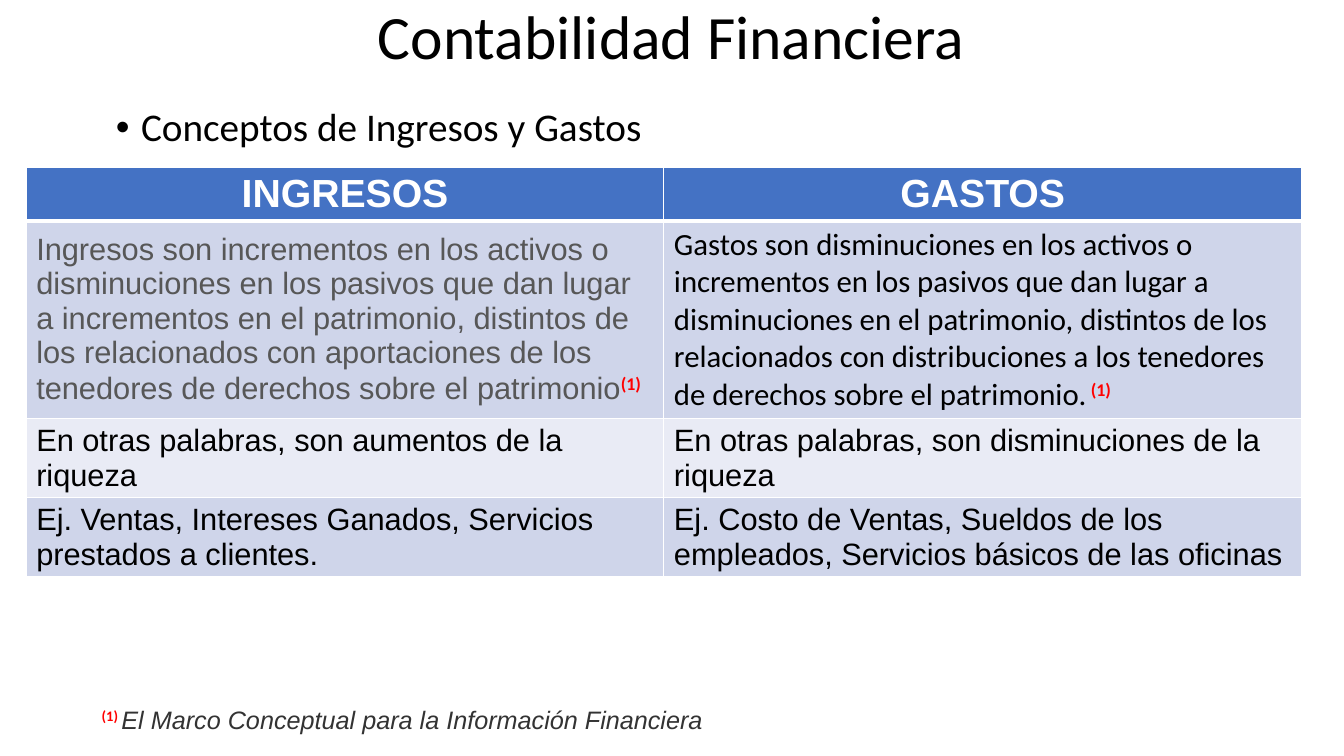
from dataclasses import dataclass

from lxml import etree
from pptx import Presentation
from pptx import util as u
from pptx.dml.color import RGBColor
from pptx.enum import text
from pptx.oxml import ns

PX = 9144  # 100 px to the inch
SLIDE = (1333, 750)


@dataclass(frozen=True)
class Theme:
    sans: str = "Arial"
    main: str = "Calibri"
    black: str = "000000"
    white: str = "FFFFFF"
    grey: str = "575757"
    dark: str = "333333"
    red: str = "FF0000"
    header: str = "4472C4"
    bands: tuple = ("CFD5EA", "E9EBF5")
    title: int = 44
    heading: int = 28
    cell: int = 22
    note: int = 18


T = Theme()
TITLE = dict(name=T.main, size=T.title, color=T.black)
BULLET = dict(name=T.main, size=T.heading, color=T.black)
HEADER = dict(name=T.sans, size=T.heading, color=T.white, bold=True)
CELL = dict(name=T.sans, size=T.cell, color=T.black, bold=False)
CELL_GREY = {**CELL, "color": T.grey}
CELL_MAIN = {**CELL, "name": T.main}
MARK = dict(name=T.main, size=T.cell, color=T.red, bold=True, raised=True)
NOTE_MARK = {**MARK, "size": T.note}
NOTE = dict(name=T.sans, size=T.note, color=T.dark, italic=True)

ROW_HEIGHTS = (52, 196, 78, 78)
ROWS = [
    [[("INGRESOS", HEADER)], [("GASTOS", HEADER)]],
    [
        [("Ingresos son incrementos en los activos o disminuciones en los pasivos "
          "que dan lugar a incrementos en el patrimonio, distintos de los "
          "relacionados con aportaciones de los tenedores de derechos sobre el "
          "patrimonio", CELL_GREY), ("(1)", MARK)],
        [("Gastos son disminuciones en los activos o incrementos en los pasivos "
          "que dan lugar a disminuciones en el patrimonio, distintos de los "
          "relacionados con distribuciones a los tenedores de derechos sobre el "
          "patrimonio.", CELL_MAIN), (" (1)", MARK)],
    ],
    [
        [("En otras palabras, son aumentos de la riqueza", CELL)],
        [("En otras palabras, son disminuciones de la riqueza", CELL)],
    ],
    [
        [("Ej. Ventas, Intereses Ganados, Servicios prestados a clientes.", CELL)],
        [("Ej. Costo de Ventas, Sueldos de los empleados, Servicios básicos de "
          "las oficinas", CELL)],
    ],
]


def emu(box):
    return [u.Emu(v * PX) for v in box]


def put_runs(p, runs, **layout):
    """Fill a paragraph with (words, format) runs and set its layout."""
    for key, value in layout.items():
        setattr(p, key, value)
    for words, fmt in runs:
        r = p.add_run()
        r.text = words
        for key, value in fmt.items():
            if key == "color":
                r.font.color.rgb = RGBColor.from_string(value)
            elif key == "raised":
                r._r.get_or_add_rPr().set("baseline", "30000")
            else:
                setattr(r.font, key, u.Pt(value) if key == "size" else value)


def place(sp, box, anchor):
    sp.left, sp.top, sp.width, sp.height = emu(box)
    tf = sp.text_frame
    tf.word_wrap = True
    tf.auto_size = text.MSO_AUTO_SIZE.NONE
    tf.vertical_anchor = anchor
    return tf.paragraphs[0]


def add_title(s, box):
    p = place(s.shapes.title, box, text.MSO_ANCHOR.MIDDLE)
    put_runs(p, [("Contabilidad Financiera", TITLE)],
             alignment=text.PP_ALIGN.CENTER, line_spacing=0.9)


def add_topic(s, box):
    p = place(s.placeholders[1], box, text.MSO_ANCHOR.TOP)
    pPr = p._p.get_or_add_pPr()
    pPr.set("marL", str(25 * PX))
    pPr.set("indent", str(-25 * PX))
    etree.SubElement(pPr, ns.qn("a:buFont"), typeface=T.sans)
    etree.SubElement(pPr, ns.qn("a:buChar"), char="•")
    put_runs(p, [("Conceptos de Ingresos y Gastos", BULLET)],
             line_spacing=0.9, space_before=u.Pt(0))


def set_borders(cell, bottom):
    tcPr = cell._tc.get_or_add_tcPr()
    for side, points in (("L", 1), ("R", 1), ("T", 1), ("B", bottom)):
        ln = etree.SubElement(tcPr, ns.qn(f"a:ln{side}"), w=str(u.Pt(points)))
        fill = etree.SubElement(ln, ns.qn("a:solidFill"))
        etree.SubElement(fill, ns.qn("a:srgbClr"), val=T.white)


def add_comparison(s, box):
    table = s.shapes.add_table(len(ROWS), len(ROWS[0]), *emu(box)).table
    for i, (row, height) in enumerate(zip(ROWS, ROW_HEIGHTS)):
        table.rows[i].height = u.Emu(height * PX)
        for j, runs in enumerate(row):
            cell = table.cell(i, j)
            set_borders(cell, 1 if i else 3)
            cell.fill.solid()
            color = T.bands[(i - 1) % 2] if i else T.header
            cell.fill.fore_color.rgb = RGBColor.from_string(color)
            align = text.PP_ALIGN.LEFT if i else text.PP_ALIGN.CENTER
            put_runs(cell.text_frame.paragraphs[0], runs, alignment=align)
    table.cell(1, 0).vertical_anchor = text.MSO_ANCHOR.MIDDLE


def add_footnote(s, box):
    p = place(s.shapes.add_textbox(*emu(box)), box, text.MSO_ANCHOR.TOP)
    put_runs(p, [("(1) ", NOTE_MARK),
                 ("El Marco Conceptual para la Información Financiera", NOTE)],
             line_spacing=0.9)


def main():
    prs = Presentation()
    prs.slide_width, prs.slide_height = emu(SLIDE)
    s = prs.slides.add_slide(prs.slide_layouts[1])
    add_title(s, (91, -33, 1150, 145))
    add_topic(s, (105, 102, 1150, 476))
    add_comparison(s, (26, 166, 1265, sum(ROW_HEIGHTS)))
    add_footnote(s, (91, 697, 1150, 53))
    prs.save("out.pptx")


if __name__ == "__main__":
    main()
